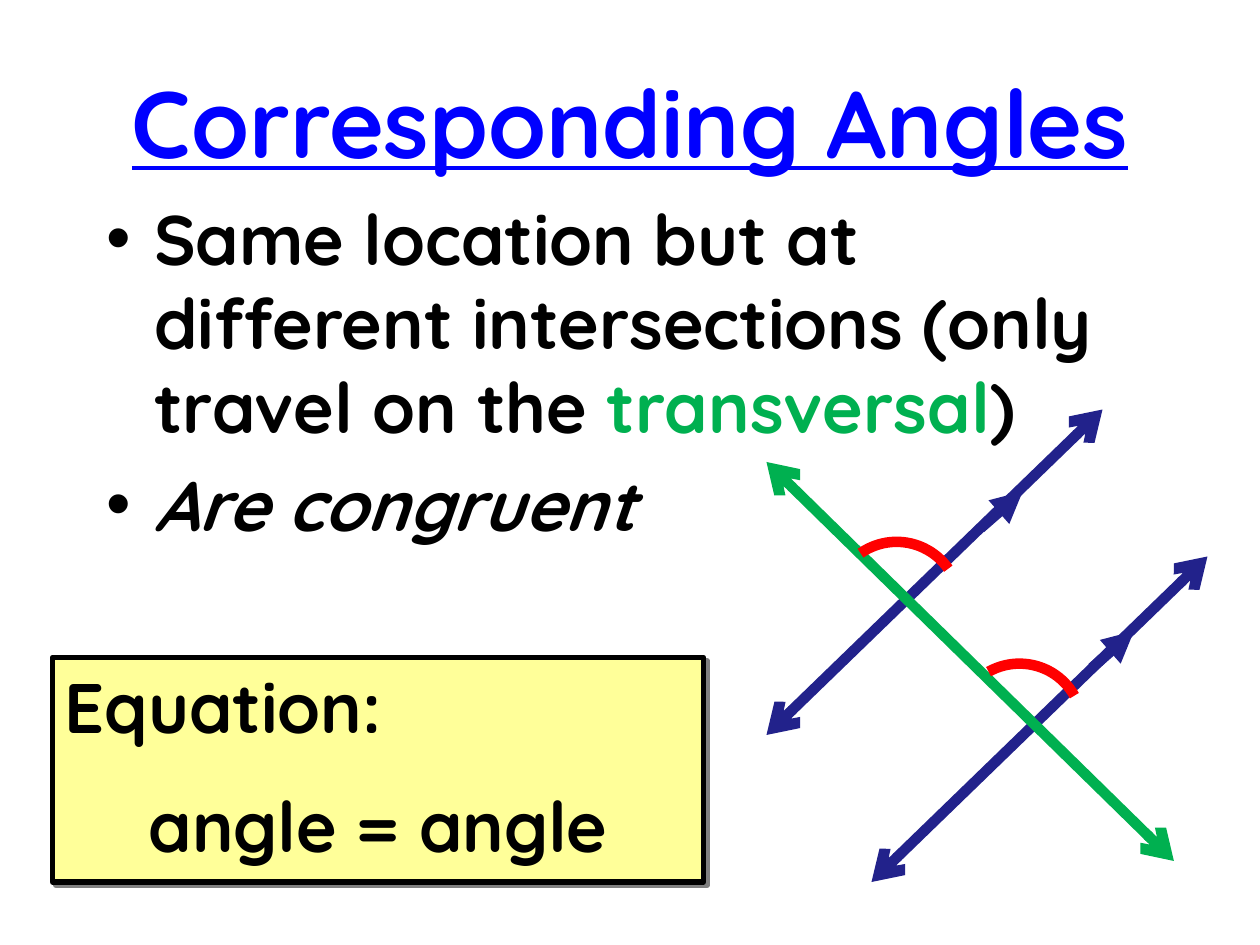
"""Build the slide on corresponding angles."""
import dataclasses
import typing

import lxml.etree
import pptx
import pptx.dml.color
import pptx.enum.shapes
import pptx.enum.text
import pptx.oxml.ns
import pptx.util

SCALE = 7620
FACE = "Quicksand"
INK = {
    "title": "0000FF",
    "text": "000000",
    "cross": "00B050",
    "ray": "22228B",
    "arc": "FF0000",
    "box": "FFFF99",
    "shade": "808080",
}
ALIGN = pptx.enum.text.PP_ALIGN
SHAPE = pptx.enum.shapes.MSO_SHAPE


@dataclasses.dataclass(frozen=True)
class Line:
    start: tuple[int, int]
    end: tuple[int, int]
    ink: str
    head: str
    tail: str = "none"


@dataclasses.dataclass(frozen=True)
class Arc:
    left: int
    top: int
    turn: float


LINES = [
    Line((1050, 390), (730, 700), "ray", "arrow", "arrow"),
    Line((1150, 530), (830, 840), "ray", "arrow", "arrow"),
    Line((730, 440), (1118, 820), "cross", "arrow", "arrow"),
    Line((974, 468), (934, 503), "ray", "triangle"),
    Line((1080, 601), (1040, 636), "ray", "triangle"),
]
ARCS = [Arc(794, 516, 325), Arc(911, 632, 330.6)]


def px(*nums: int) -> list[pptx.util.Emu]:
    return [pptx.util.Emu(num * SCALE) for num in nums]


def tint(name: str) -> pptx.dml.color.RGBColor:
    return pptx.dml.color.RGBColor.from_string(INK[name])


def add(node: typing.Any, tag: str, **attrs: str) -> typing.Any:
    return lxml.etree.SubElement(node, pptx.oxml.ns.qn(tag), attrs)


def style(para: typing.Any, size: int = 40, ink: str = "text") -> None:
    font = para.font
    font.name, font.size, font.bold = FACE, pptx.util.Pt(size), True
    font.color.rgb = tint(ink)


def stroke(line: typing.Any, ink: str, width: int) -> None:
    line.color.rgb = tint(ink)
    line.width = pptx.util.Pt(width)


def draw_title(slide: typing.Any) -> None:
    title = slide.shapes.title
    title.left, title.top, title.width, title.height = px(0, 0, 1200, 230)
    frame = title.text_frame
    frame.text = "Corresponding Angles"
    frame.vertical_anchor = pptx.enum.text.MSO_ANCHOR.MIDDLE
    para = frame.paragraphs[0]
    para.alignment = ALIGN.CENTER
    style(para, 54, "title")
    para.font.underline = True


def draw_list(slide: typing.Any) -> None:
    frame = slide.shapes.add_textbox(*px(90, 180, 1020, 350)).text_frame
    frame.word_wrap = True
    first, last = frame.paragraphs[0], frame.add_paragraph()
    parts = [
        "Same location but at different intersections (only travel on the ",
        "transversal",
        ")",
    ]
    for part in parts:
        first.add_run().text = part
    last.add_run().text = "Are congruent"
    for para in (first, last):
        para.space_before = pptx.util.Pt(8)
        props = para._p.get_or_add_pPr()
        props.set("marL", str(45 * SCALE))
        props.set("indent", str(-45 * SCALE))
        add(props, "a:buFont", typeface="Arial")
        add(props, "a:buChar", char="•")
        style(para)
    first.runs[1].font.color.rgb = tint("cross")
    last.font.italic = True


def draw_box(slide: typing.Any) -> None:
    box = slide.shapes.add_shape(SHAPE.RECTANGLE, *px(50, 626, 620, 214))
    box.fill.solid()
    box.fill.fore_color.rgb = tint("box")
    stroke(box.line, "text", 3)
    box.shadow.inherit = False
    effects = box._element.spPr.find(pptx.oxml.ns.qn("a:effectLst"))
    shade = add(effects, "a:outerShdw", dist="35921", dir="2700000",
                algn="ctr", rotWithShape="0")
    add(shade, "a:srgbClr", val=INK["shade"])
    frame = box.text_frame
    frame.word_wrap = True
    frame.vertical_anchor = pptx.enum.text.MSO_ANCHOR.TOP
    frame.text = "Equation:\nangle = angle"
    for para, align in zip(frame.paragraphs, (ALIGN.LEFT, ALIGN.CENTER)):
        para.alignment = align
        para.space_before = pptx.util.Pt(20)
        style(para)


def draw_line(slide: typing.Any, item: Line) -> None:
    kind = pptx.enum.shapes.MSO_CONNECTOR.STRAIGHT
    line = slide.shapes.add_connector(kind, *px(*item.start, *item.end))
    stroke(line.line, item.ink, 6)
    edge = line.line._get_or_add_ln()
    add(edge, "a:headEnd", type=item.head)
    add(edge, "a:tailEnd", type=item.tail)
    add(line._element.spPr, "a:effectLst")


def draw_arc(slide: typing.Any, item: Arc) -> None:
    arc = slide.shapes.add_shape(SHAPE.ARC, *px(item.left, item.top, 120, 120))
    arc.rotation = item.turn
    arc.fill.background()
    arc.shadow.inherit = False
    stroke(arc.line, "arc", 6)


def main() -> None:
    deck = pptx.Presentation()
    deck.slide_width, deck.slide_height = px(1200, 900)
    slide = deck.slides.add_slide(deck.slide_layouts[5])
    draw_title(slide)
    draw_list(slide)
    draw_box(slide)
    for line in LINES:
        draw_line(slide, line)
    for arc in ARCS:
        draw_arc(slide, arc)
    deck.save("out.pptx")


if __name__ == "__main__":
    main()
